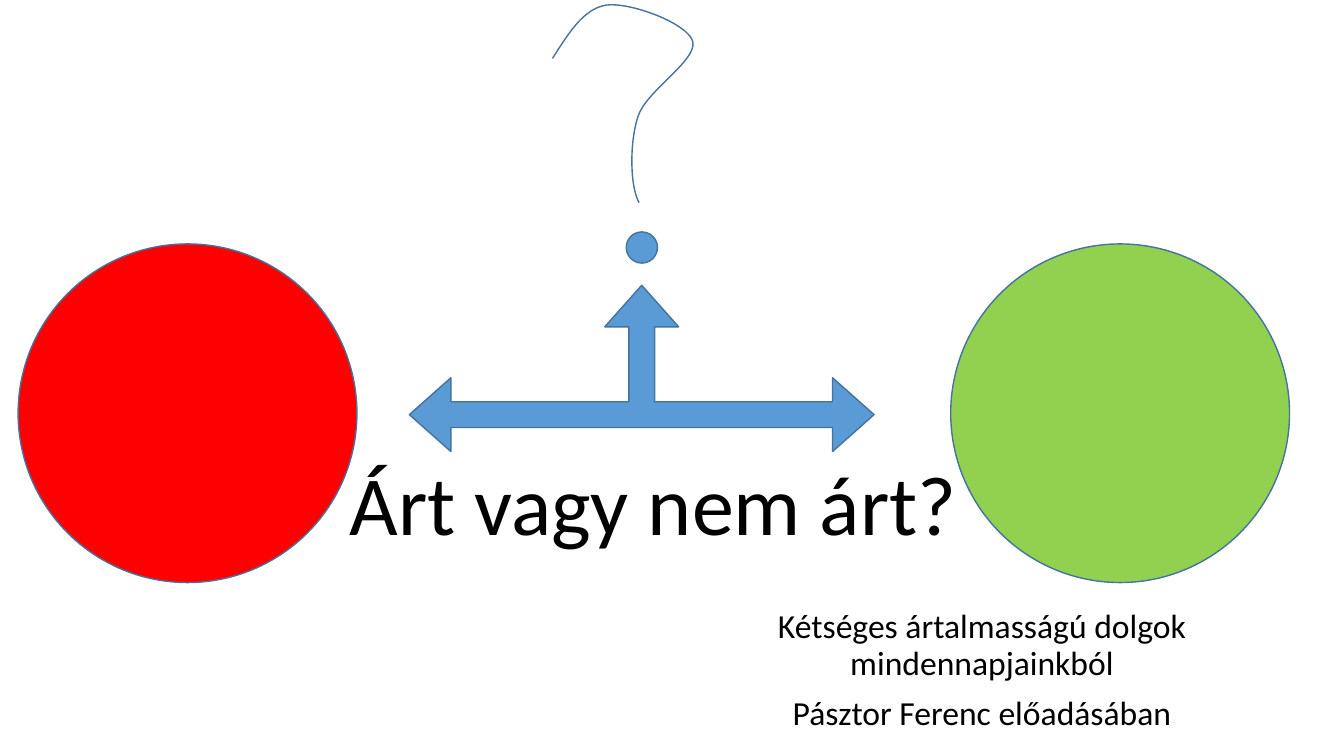
"""Build the title slide asking whether doubtful everyday things do harm."""
from pptx import Presentation
from pptx.dml.color import RGBColor
from pptx.enum.shapes import MSO_SHAPE as Preset
from pptx.enum.text import MSO_ANCHOR as Anchor, PP_ALIGN as Align
from pptx.util import Inches, Pt

BLUE, OUTLINE, RED, GREEN, BLACK = "5B9BD5", "43739E", "FF0000", "92D050", "000000"

presentation = Presentation()
presentation.slide_width, presentation.slide_height = Inches(13.33), Inches(7.5)
slide = presentation.slides.add_slide(presentation.slide_layouts[6])


def shares(*percents):
    """Turn alternating percentages of slide width and height into lengths."""
    sides = (presentation.slide_width, presentation.slide_height)
    return [round(sides[index % 2] * percent / 100) for index, percent in enumerate(percents)]


def paint(color_format, color):
    """Set a fill or font colour from a hex string."""
    color_format.rgb = RGBColor.from_string(color)


texts = [
    ((11.1, 54.67, 75.02, 19.2), Anchor.BOTTOM, 60, ["Árt vagy nem árt?"]),
    ((48.91, 80, 48.31, 15.6), Anchor.TOP, 24,
     ["Kétséges ártalmasságú dolgok mindennapjainkból", "Pásztor Ferenc előadásában"]),
]
for box, anchor, size, lines in texts:
    text_frame = slide.shapes.add_textbox(*shares(*box)).text_frame
    text_frame.word_wrap = True
    text_frame.vertical_anchor = anchor
    text_frame.text = "\n".join(lines)
    for index, paragraph in enumerate(text_frame.paragraphs):
        paragraph.alignment = Align.CENTER
        paragraph.line_spacing = 0.9
        paragraph.space_before = Pt(10 if index else 0)
        for run in paragraph.runs:
            run.font.name, run.font.size = "Calibri", Pt(size)
            paint(run.font.color, BLACK)

arrow = slide.shapes.add_shape(Preset.LEFT_RIGHT_UP_ARROW, *shares(30.46, 37.73, 34.58, 22))
for index, adjustment in enumerate((0.155, 0.222, 0.25)):
    arrow.adjustments[index] = adjustment

hook_start = (41.11, 7.73)
hook_curves = [
    ((42.31, 4.4), (43.44, 1.07), (45.16, 0.67)),
    ((46.89, 0.27), (51.16, 3.07), (51.54, 5.47)),
    ((51.91, 8), (48.16, 11.87), (47.49, 15.33)),
    ((46.81, 18.93), (46.89, 24.8), (47.56, 26.8)),
]
steps = 24
hook_points = [hook_start]
for curve in hook_curves:
    controls = [hook_points[-1], *curve]
    for step in range(1, steps + 1):
        t = step / steps
        weights = ((1 - t) ** 3, 3 * t * (1 - t) ** 2, 3 * t ** 2 * (1 - t), t ** 3)
        hook_points.append(tuple(
            sum(weight * control[axis] for weight, control in zip(weights, controls))
            for axis in (0, 1)))
builder = slide.shapes.build_freeform(*shares(*hook_start))
builder.add_line_segments([shares(*point) for point in hook_points[1:]], close=False)
hook = builder.convert_to_shape()

dot, green_circle, red_circle = [
    slide.shapes.add_shape(Preset.OVAL, *shares(*box))
    for box in ((46.59, 30.67, 2.33, 4.13), (70.74, 32.27, 25.21, 44.8), (1.35, 32.27, 25.21, 44.8))
]

for shape, color in ((arrow, BLUE), (hook, None), (dot, BLUE),
                     (green_circle, GREEN), (red_circle, RED)):
    shape.shadow.inherit = False
    shape.line.width = Pt(1)
    paint(shape.line.color, OUTLINE)
    if color:
        shape.fill.solid()
        paint(shape.fill.fore_color, color)
    else:
        shape.fill.background()

presentation.save("out.pptx")
